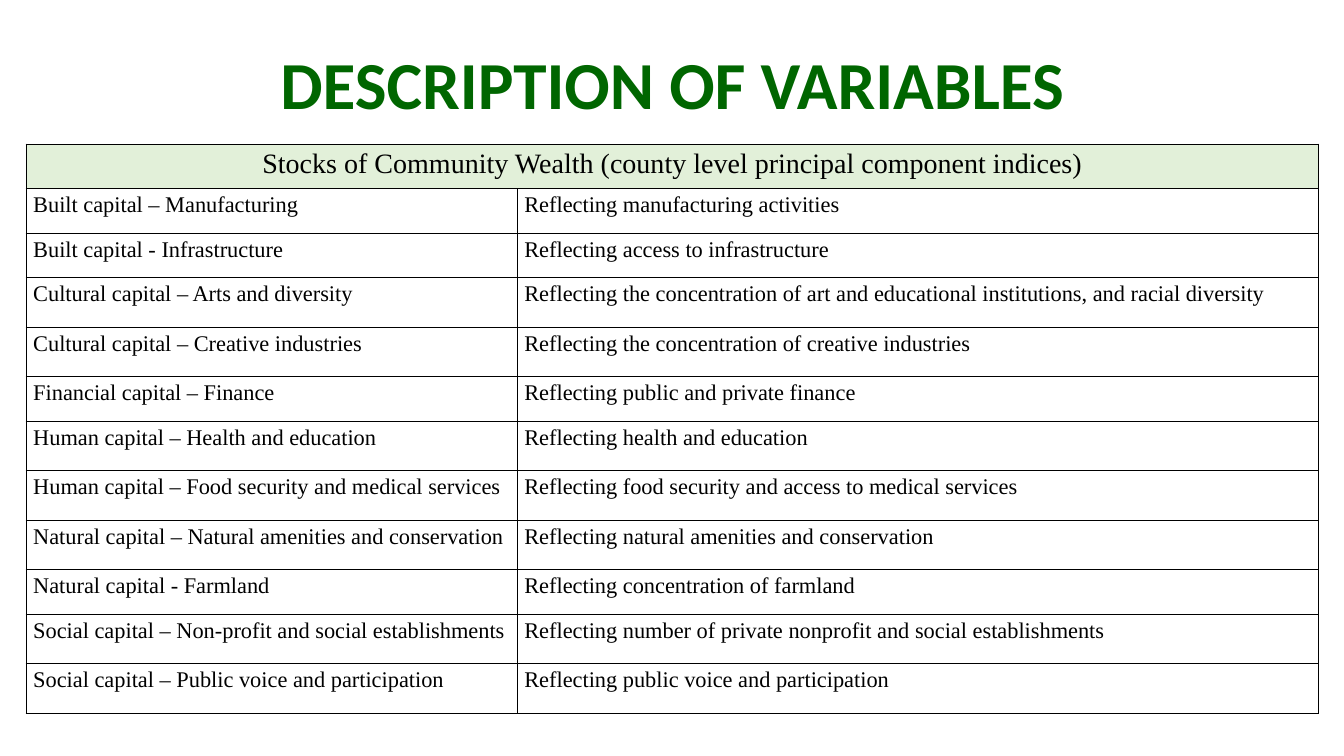
from lxml import etree
from pptx import Presentation
from pptx.dml.color import RGBColor
from pptx.enum.text import MSO_ANCHOR, PP_ALIGN
from pptx.oxml.ns import qn
from pptx.util import Inches, Pt

CENTER, LEFT = PP_ALIGN.CENTER, PP_ALIGN.LEFT
MIDDLE, TOP = MSO_ANCHOR.MIDDLE, MSO_ANCHOR.TOP
TITLE_ONLY = 5
GREEN, PALE_GREEN, BLACK, WHITE = "006600", "E2F0D9", "000000", "FFFFFF"
TITLE_BOX = (0.92, 0.31, 11.5, 1.13)
TABLE_BOX = (0.26, 1.43, 12.82, 5.65)
COLUMN_SHARES = (0.38, 0.62)
SHORT, TALL = 9, 10
HEADING = "Stocks of Community Wealth (county level principal component indices)"
VARIABLES = [
    ("Built capital – Manufacturing", "Reflecting manufacturing activities", SHORT),
    ("Built capital - Infrastructure", "Reflecting access to infrastructure", SHORT),
    ("Cultural capital – Arts and diversity",
     "Reflecting the concentration of art and educational institutions, and racial diversity", TALL),
    ("Cultural capital – Creative industries", "Reflecting the concentration of creative industries", TALL),
    ("Financial capital – Finance", "Reflecting public and private finance", SHORT),
    ("Human capital – Health and education", "Reflecting health and education", TALL),
    ("Human capital – Food security and medical services",
     "Reflecting food security and access to medical services", TALL),
    ("Natural capital – Natural amenities and conservation",
     "Reflecting natural amenities and conservation", TALL),
    ("Natural capital - Farmland", "Reflecting concentration of farmland", SHORT),
    ("Social capital – Non-profit and social establishments",
     "Reflecting number of private nonprofit and social establishments", TALL),
    ("Social capital – Public voice and participation", "Reflecting public voice and participation", TALL),
]


def color(value):
    """Turn a hex string into a colour."""
    return RGBColor.from_string(value)


def write(text_frame, text, font="Times New Roman", size=16, fill=BLACK, bold=False,
          align=LEFT, spacing=1.15):
    """Write one formatted paragraph."""
    paragraph = text_frame.paragraphs[0]
    paragraph.alignment = align
    paragraph.line_spacing = spacing
    run = paragraph.add_run()
    run.text = text
    run.font.name = font
    run.font.size = Pt(size)
    run.font.bold = bold
    run.font.color.rgb = color(fill)


def style_cell(cell, fill):
    """Give a cell its borders, margins and fill."""
    properties = cell._tc.get_or_add_tcPr()
    for side in ("a:lnL", "a:lnR", "a:lnT", "a:lnB"):
        line = etree.SubElement(properties, qn(side), w=str(Pt(1)))
        solid = etree.SubElement(line, qn("a:solidFill"))
        etree.SubElement(solid, qn("a:srgbClr"), val=BLACK)
    cell.margin_left = cell.margin_right = Inches(0.07)
    cell.margin_top = cell.margin_bottom = 0
    cell.vertical_anchor = TOP
    cell.fill.solid()
    cell.fill.fore_color.rgb = color(fill)


def place_title(slide, box):
    """Place the slide title in its box."""
    title = slide.shapes.title
    title.left, title.top, title.width, title.height = map(Inches, box)
    title.text_frame.vertical_anchor = MIDDLE
    write(title.text_frame, "DESCRIPTION OF VARIABLES", font="Calibri", size=48,
          fill=GREEN, bold=True, align=CENTER, spacing=0.9)


def place_variables(slide, box):
    """Place the table of variables in its box."""
    left, top, width, height = map(Inches, box)
    weights = [SHORT] + [weight for _, _, weight in VARIABLES]
    table = slide.shapes.add_table(len(weights), len(COLUMN_SHARES), left, top, width, height).table
    for column, share in zip(table.columns, COLUMN_SHARES):
        column.width = int(width * share)
    for row, weight in zip(table.rows, weights):
        row.height = int(height * weight / sum(weights))
    for index, row in enumerate(table.rows):
        for cell in row.cells:
            style_cell(cell, WHITE if index else PALE_GREEN)
    heading = table.cell(0, 0)
    heading.merge(table.cell(0, 1))
    write(heading.text_frame, HEADING, size=20, align=CENTER)
    for index, (name, meaning, _) in enumerate(VARIABLES, 1):
        write(table.cell(index, 0).text_frame, name)
        write(table.cell(index, 1).text_frame, meaning)


def main():
    """Build and save the slide."""
    presentation = Presentation()
    presentation.slide_width, presentation.slide_height = Inches(13.33), Inches(7.5)
    slide = presentation.slides.add_slide(presentation.slide_layouts[TITLE_ONLY])
    place_title(slide, TITLE_BOX)
    place_variables(slide, TABLE_BOX)
    presentation.save("out.pptx")


if __name__ == "__main__":
    main()
